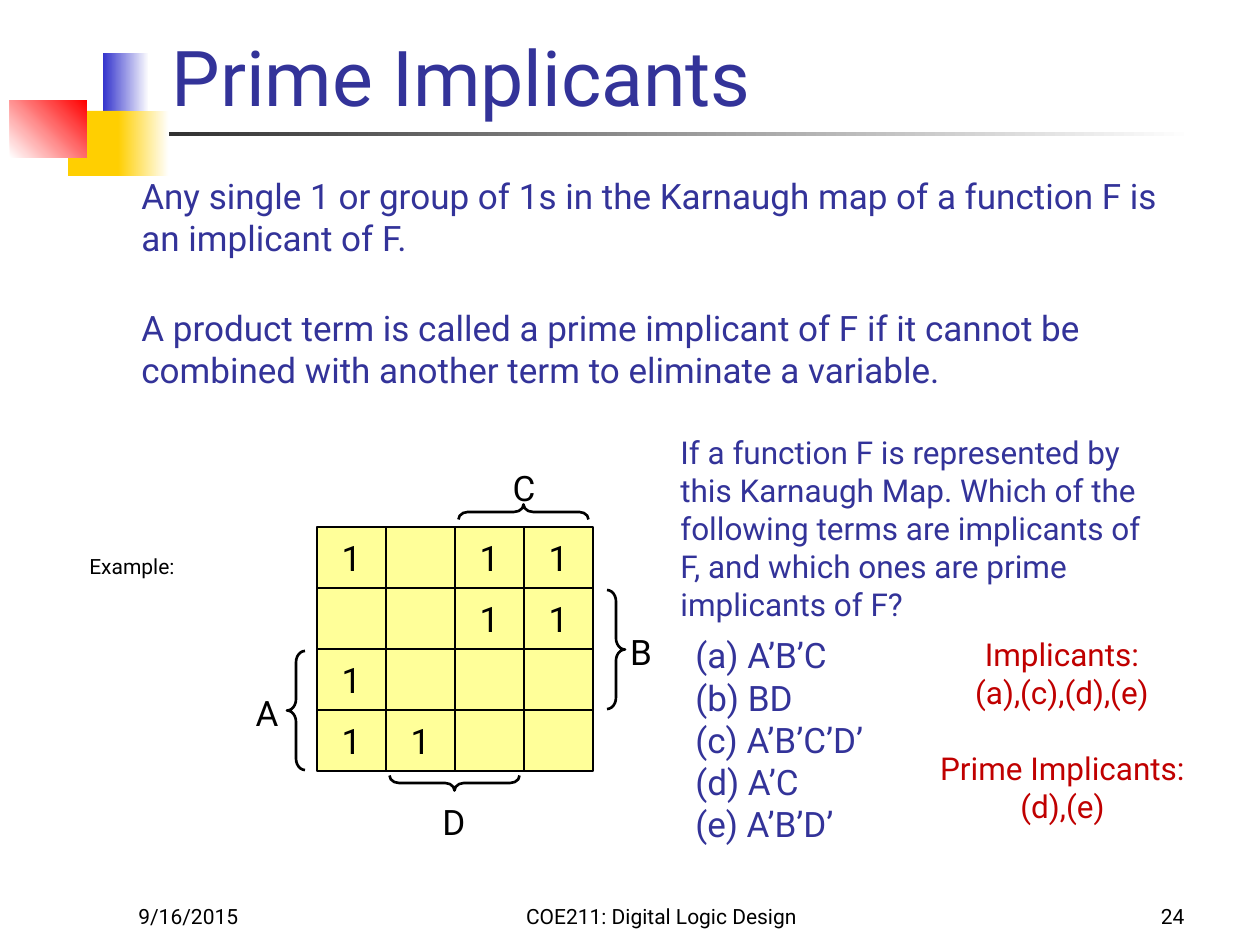
import pptx
import pptx.dml.color
import pptx.enum.shapes
import pptx.enum.text
import pptx.util

SHAPE = pptx.enum.shapes.MSO_SHAPE
ALIGN = pptx.enum.text.PP_ALIGN
ANCHOR = pptx.enum.text.MSO_ANCHOR
PX = 914400 / 126
FONT = "Roboto"
COLORS = {
    "navy": "333399", "black": "000000", "answer": "C00000", "cell": "FFFF99",
    "rule": "1C1C1C", "blue": "3333CC", "gold": "FFCF01", "red": "FF0000", "white": "FFFFFF",
}


def rgb(name):
    return pptx.dml.color.RGBColor.from_string(COLORS[name])


def set_text(sp, text, size, color, align=ALIGN.LEFT, anchor=ANCHOR.TOP, wrap=False):
    tf = sp.text_frame
    tf.text = text
    tf.word_wrap = wrap
    tf.auto_size = pptx.enum.text.MSO_AUTO_SIZE.NONE
    tf.vertical_anchor = anchor
    for p in tf.paragraphs:
        p.alignment = align
        for r in p.runs:
            r.font.name = FONT
            r.font.size = pptx.util.Pt(size)
            r.font.color.rgb = rgb(color)


prs = pptx.Presentation()
prs.slide_width = round(1260 * PX)
prs.slide_height = round(945 * PX)
s = prs.slides.add_slide(prs.slide_layouts[5])

# Corner ornament and title rule: box, first colour, last colour, angle
ornaments = [
    ((60, 132, 1134, 4), "rule", "white", 0),
    ((103, 53, 46, 65), "blue", "white", 0),
    ((68, 111, 58, 65), "gold", "gold", 0),
    ((118, 111, 51, 65), "gold", "white", 0),
    ((10, 100, 77, 58), "white", "red", 45),
]
for box, first, last, angle in ornaments:
    sp = s.shapes.add_shape(SHAPE.RECTANGLE, *[round(v * PX) for v in box])
    sp.shadow.inherit = False
    sp.line.fill.background()
    if first == last:
        sp.fill.solid()
        sp.fill.fore_color.rgb = rgb(first)
    else:
        sp.fill.gradient()
        sp.fill.gradient_angle = angle
        for stop, color in zip(sp.fill.gradient_stops, (first, last)):
            stop.color.rgb = rgb(color)

title = s.shapes.title
title.left, title.top, title.width, title.height = [round(v * PX) for v in (159, 10, 1074, 118)]
set_text(title, "Prime Implicants", 44, "navy", anchor=ANCHOR.BOTTOM, wrap=True)

# Karnaugh map
CELL_W, CELL_H = 69, 61
for row, ones in enumerate(["1 11", "  11", "1   ", "11  "]):
    for col, value in enumerate(ones):
        box = (317 + col * CELL_W, 527 + row * CELL_H, CELL_W, CELL_H)
        sp = s.shapes.add_shape(SHAPE.RECTANGLE, *[round(v * PX) for v in box])
        sp.shadow.inherit = False
        sp.fill.solid()
        sp.fill.fore_color.rgb = rgb("cell")
        sp.line.color.rgb = rgb("black")
        sp.line.width = pptx.util.Pt(0.75)
        if value == "1":
            set_text(sp, value, 20, "black", ALIGN.CENTER, ANCHOR.MIDDLE)

# Braces marking where A, B, C and D are 1
braces = [
    (SHAPE.LEFT_BRACE, (287, 651, 18, 119), 0),
    (SHAPE.RIGHT_BRACE, (607, 590, 18, 119), 0),
    (SHAPE.LEFT_BRACE, (516, 447, 15, 130), 90),
    (SHAPE.LEFT_BRACE, (447, 718, 15, 130), 270),
]
for kind, box, rotation in braces:
    sp = s.shapes.add_shape(kind, *[round(v * PX) for v in box])
    sp.shadow.inherit = False
    sp.rotation = rotation
    sp.adjustments[0] = 0.63
    sp.fill.background()
    sp.line.color.rgb = rgb("black")
    sp.line.width = pptx.util.Pt(1.5)

for name, x, y in [("A", 242, 685), ("B", 616, 624), ("C", 499, 460), ("D", 429, 794)]:
    sp = s.shapes.add_textbox(*[round(v * PX) for v in (x, y, 50, 55)])
    set_text(sp, name, 20, "black", ALIGN.CENTER)

# Running text: box, text, size, colour, alignment, anchor, wrap
texts = [
    ((129, 168, 1043, 97),
     "Any single 1 or group of 1s in the Karnaugh map of a function F is an implicant of F.",
     20, "navy", ALIGN.LEFT, ANCHOR.MIDDLE, True),
    ((129, 300, 1043, 97),
     "A product term is called a prime implicant of F if it cannot be combined with another "
     "term to eliminate a variable.",
     20, "navy", ALIGN.LEFT, ANCHOR.MIDDLE, True),
    ((71, 547, 122, 38), "Example:", 12, "black", ALIGN.CENTER, ANCHOR.MIDDLE, False),
    ((668, 426, 530, 204),
     "If a function F is represented by\nthis Karnaugh Map. Which of the\n"
     "following terms are implicants of\nF, and which ones are prime\nimplicants of F?",
     18, "navy", ALIGN.LEFT, ANCHOR.MIDDLE, False),
    ((683, 627, 213, 224),
     "(a) A’B’C\n(b) BD\n(c) A’B’C’D’\n(d) A’C\n(e) A’B’D’",
     20, "navy", ALIGN.LEFT, ANCHOR.MIDDLE, False),
    ((953, 628, 218, 90), "Implicants:\n(a),(c),(d),(e)",
     18, "answer", ALIGN.CENTER, ANCHOR.MIDDLE, False),
    ((927, 742, 271, 90), "Prime Implicants:\n(d),(e)",
     18, "answer", ALIGN.CENTER, ANCHOR.MIDDLE, False),
    ((126, 872, 262, 63), "9/16/2015", 12, "black", ALIGN.LEFT, ANCHOR.BOTTOM, True),
    ((462, 872, 399, 63), "COE211: Digital Logic Design",
     12, "black", ALIGN.CENTER, ANCHOR.BOTTOM, True),
    ((935, 872, 262, 63), "24", 12, "black", ALIGN.RIGHT, ANCHOR.BOTTOM, True),
]
for box, *content in texts:
    sp = s.shapes.add_textbox(*[round(v * PX) for v in box])
    set_text(sp, *content)

prs.save("out.pptx")
